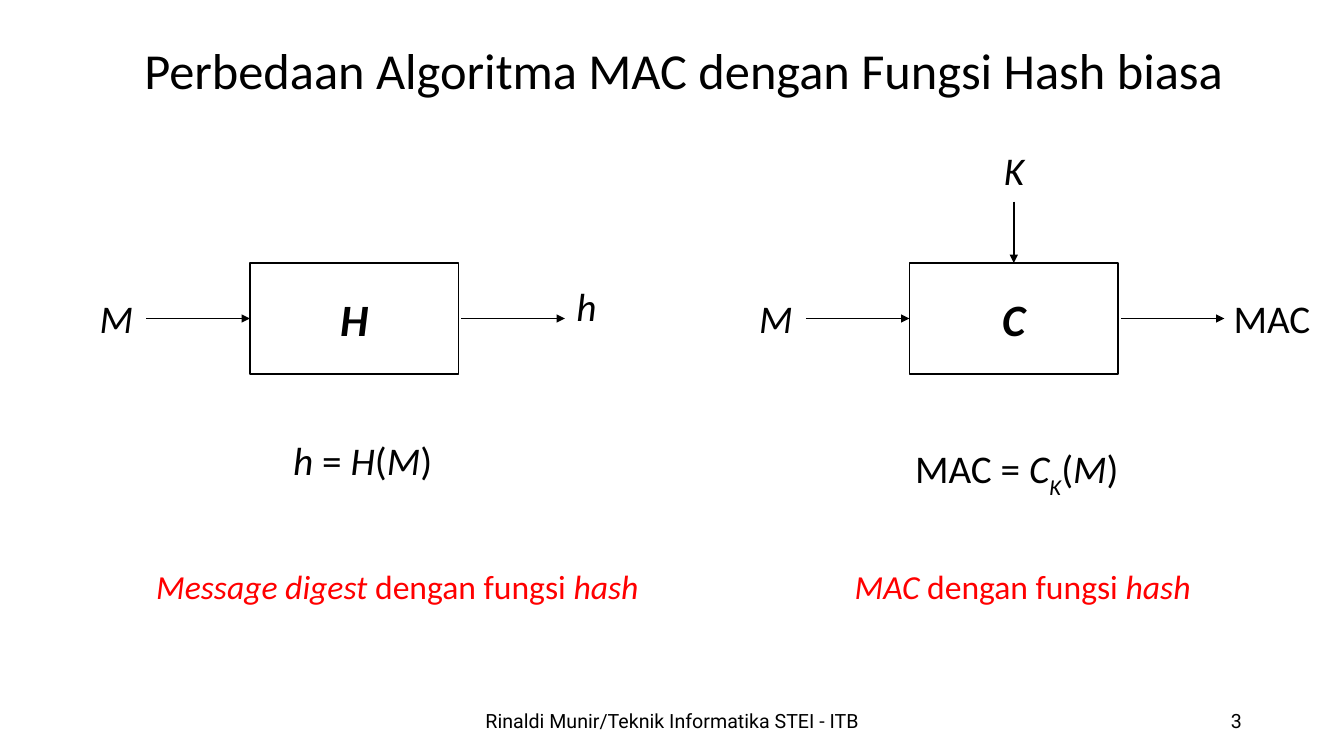
from lxml.etree import SubElement
from pptx import Presentation
from pptx.dml.color import RGBColor
from pptx.enum.shapes import MSO_CONNECTOR, MSO_SHAPE
from pptx.enum.text import MSO_ANCHOR, MSO_AUTO_SIZE, PP_ALIGN
from pptx.oxml.ns import qn
from pptx.util import Inches, Pt

BLACK = RGBColor(0, 0, 0)
RED = RGBColor(255, 0, 0)
WHITE = RGBColor(255, 255, 255)

deck = Presentation()
deck.slide_width = Inches(13.33)
deck.slide_height = Inches(7.5)
slide = deck.slides.add_slide(deck.slide_layouts[6])
shapes = slide.shapes

# All lengths are percent of the slide: COL across, ROW down
COL = deck.slide_width / 100
ROW = deck.slide_height / 100


def write(shape, runs, size, color=BLACK, face="Calibri", align=PP_ALIGN.LEFT):
    """Fill a shape with (text, style) runs; style holds b, i or s (subscript)."""
    para = shape.text_frame.paragraphs[0]
    para.alignment = align
    for text, style in runs:
        run = para.add_run()
        run.text = text
        font = run.font
        font.name, font.size, font.color.rgb = face, Pt(size), color
        font.bold, font.italic = "b" in style, "i" in style
        if "s" in style:
            run._r.get_or_add_rPr().set("baseline", "-30000")


def arrow(x1, y1, x2, y2):
    line = shapes.add_connector(MSO_CONNECTOR.STRAIGHT, int(x1 * COL), int(y1 * ROW),
                                int(x2 * COL), int(y2 * ROW))
    line.line.color.rgb = BLACK
    line.line.width = Pt(1)
    props = line._element.spPr
    SubElement(props.find(qn("a:ln")), qn("a:tailEnd"), type="triangle")
    SubElement(props, qn("a:effectLst"))


# Footer and page number
for x, wide, text, align in [
    (33.15, 33.75, "Rinaldi Munir/Teknik Informatika STEI - ITB", PP_ALIGN.CENTER),
    (70.65, 22.5, "3", PP_ALIGN.RIGHT),
]:
    foot = shapes.add_textbox(int(x * COL), int(92.67 * ROW), int(wide * COL), int(5.33 * ROW))
    foot.text_frame.word_wrap = True
    foot.text_frame.vertical_anchor = MSO_ANCHOR.MIDDLE
    write(foot, [(text, "")], 14, face="Roboto", align=align)

# The two flows: a box with an arrow in and an arrow out
SHIFT = 49.07
BOX_X, BOX_Y, BOX_W, BOX_H = 18.6, 34.8, 15.53, 14.67
MID = BOX_Y + BOX_H / 2
REACH = 7.7

for side, name in enumerate("HC"):
    left = BOX_X + side * SHIFT
    right = left + BOX_W
    box = shapes.add_shape(MSO_SHAPE.RECTANGLE, int(left * COL), int(BOX_Y * ROW),
                           int(BOX_W * COL), int(BOX_H * ROW))
    box.shadow.inherit = False
    box.fill.solid()
    box.fill.fore_color.rgb = WHITE
    box.line.color.rgb = BLACK
    box.line.width = Pt(1)
    box.text_frame.vertical_anchor = MSO_ANCHOR.MIDDLE
    write(box, [(name, "bi")], 32, align=PP_ALIGN.CENTER)
    arrow(left - REACH, MID, left, MID)
    arrow(right + 0.2, MID, right + 0.2 + REACH, MID)

key = BOX_X + SHIFT + BOX_W / 2
arrow(key, 26.67, key, BOX_Y)

# Title, labels, formulas and captions: x, y, width, height, size, color, runs
tail = [("dengan fungsi ", ""), ("hash", "i")]
arg = [("(", ""), ("M", "i"), (")", "")]
labels = [
    (10, 4.53, 82.58, 9.47, 36, BLACK,
     [("Perbedaan Algoritma MAC dengan Fungsi Hash biasa", "")]),
    (6.68, 38.27, 4.05, 7.6, 28, BLACK, [("M", "i")]),
    (6.68 + SHIFT, 38.27, 4.05, 7.6, 28, BLACK, [("M", "i")]),
    (42.15, 36.67, 3.08, 7.6, 28, BLACK, [("h", "i")]),
    (91.05, 38.27, 7.28, 7.6, 28, BLACK, [("MAC", "")]),
    (73.95, 18.67, 4.65, 7.6, 28, BLACK, [("K", "i")]),
    (21.08, 57.07, 12, 7.6, 28, BLACK, [("h ", "i"), ("= ", ""), ("H", "i")] + arg),
    (67.35, 58.13, 16.95, 7.6, 28, BLACK, [("MAC = ", ""), ("C", "i"), ("K", "is")] + arg),
    (10.88, 74.13, 37.58, 6.67, 24, RED, [("Message digest ", "i")] + tail),
    (62.85, 74.13, 26.78, 6.67, 24, RED, [("MAC ", "i")] + tail),
]
for x, y, wide, high, size, color, runs in labels:
    label = shapes.add_textbox(int(x * COL), int(y * ROW), int(wide * COL), int(high * ROW))
    label.text_frame.word_wrap = False
    label.text_frame.auto_size = MSO_AUTO_SIZE.SHAPE_TO_FIT_TEXT
    write(label, runs, size, color)

deck.save("out.pptx")
